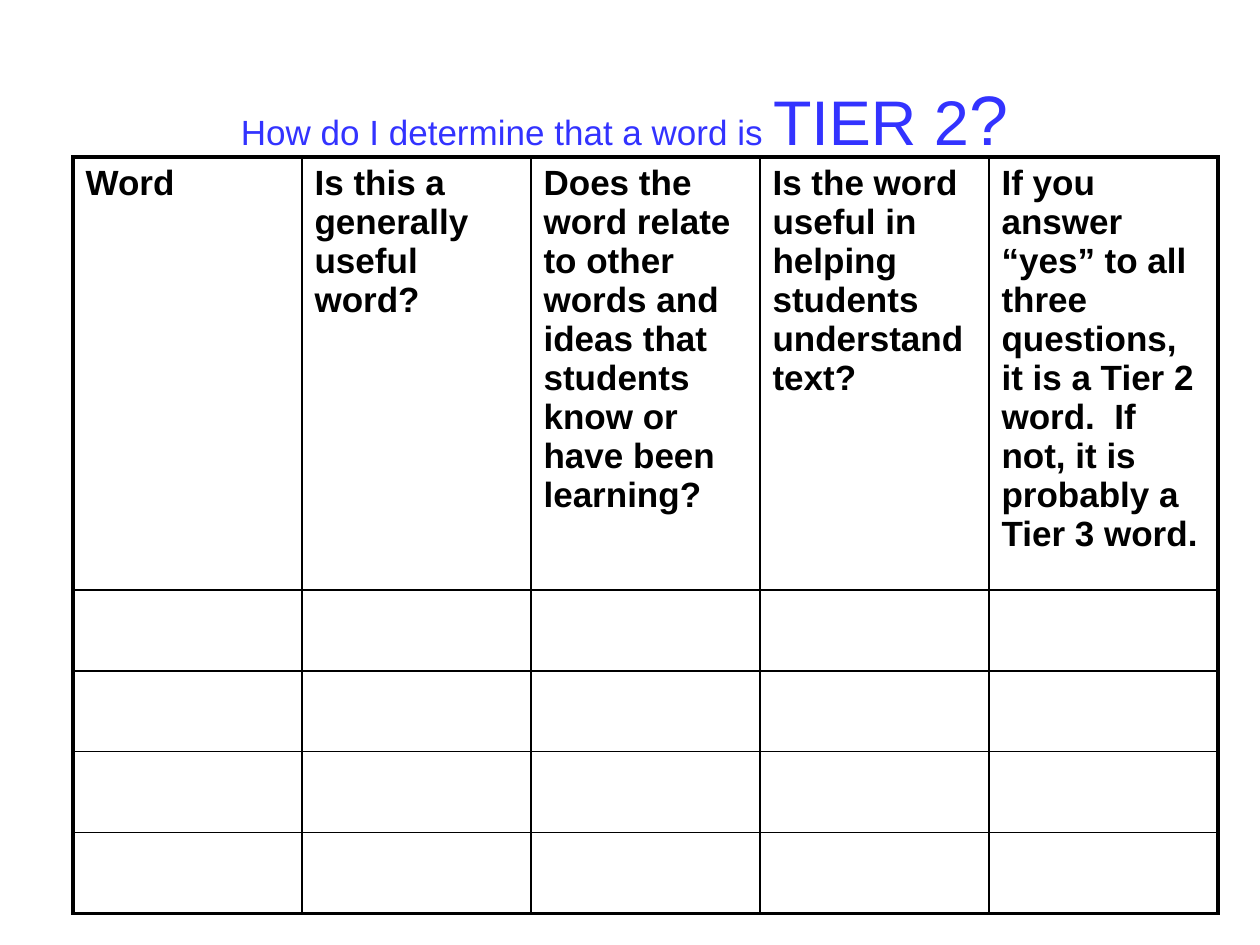
from pptx import Presentation
from pptx.dml.color import RGBColor
from pptx.enum.text import MSO_ANCHOR, PP_ALIGN
from pptx.oxml.xmlchemy import OxmlElement
from pptx.util import Pt

PX = 914400 // 126
FONT = "Arial"
COLORS = {"title": "3333FF", "text": "000000", "border": "000000"}
THIN, THICK = 1, 2.25

TITLE_RUNS = [("How do I determine that a word is ", 20), ("TIER 2", 36), ("?", 40)]
HEADINGS = [
    "Word",
    "Is this a generally useful word?",
    "Does the word relate to other words and ideas that students know or have been learning?",
    "Is the word useful in helping students understand text?",
    "If you answer “yes” to all three questions, it is a Tier 2 word.  If not, it is probably a Tier 3 word.",
]
BLANK_ROWS = 4


def px(value):
    return int(value * PX)


def style_run(run, size, color, bold=False):
    run.font.name = FONT
    run.font.size = Pt(size)
    run.font.bold = bold
    run.font.color.rgb = RGBColor.from_string(COLORS[color])


def set_borders(cell, widths):
    properties = cell._tc.get_or_add_tcPr()
    for position, (side, width) in enumerate(widths.items()):
        line = OxmlElement(f"a:ln{side}")
        line.set("w", str(Pt(width)))
        fill = OxmlElement("a:solidFill")
        color = OxmlElement("a:srgbClr")
        color.set("val", COLORS["border"])
        fill.append(color)
        line.append(fill)
        properties.insert(position, line)


def add_title(slide, left, top, width, height):
    box = slide.shapes.add_textbox(px(left), px(top), px(width), px(height))
    text_frame = box.text_frame
    text_frame.word_wrap = True
    text_frame.vertical_anchor = MSO_ANCHOR.TOP
    text_frame.margin_top = px(13)
    paragraph = text_frame.paragraphs[0]
    paragraph.alignment = PP_ALIGN.CENTER
    for text, size in TITLE_RUNS:
        run = paragraph.add_run()
        run.text = text
        style_run(run, size, "title")


def add_word_table(slide, left, top, width, height, blank_height):
    row_count, column_count = BLANK_ROWS + 1, len(HEADINGS)
    frame = slide.shapes.add_table(
        row_count, column_count, px(left), px(top), px(width), px(height)
    )
    table = frame.table
    table.first_row = False
    table.horz_banding = False
    for column in table.columns:
        column.width = px(width / column_count)
    for index, row in enumerate(table.rows):
        row.height = px(blank_height if index else height - BLANK_ROWS * blank_height)
        for position, cell in enumerate(row.cells):
            cell.fill.background()
            set_borders(cell, {
                "L": THIN if position else THICK,
                "R": THICK if position == column_count - 1 else THIN,
                "T": THIN if index else THICK,
                "B": THICK if index == row_count - 1 else THIN,
            })
    for cell, heading in zip(table.rows[0].cells, HEADINGS):
        cell.text_frame.text = heading
        style_run(cell.text_frame.paragraphs[0].runs[0], 20, "text", bold=True)


def main():
    presentation = Presentation()
    presentation.slide_width = px(1260)
    presentation.slide_height = px(945)
    slide = presentation.slides.add_slide(presentation.slide_layouts[6])
    add_title(slide, 21, 63, 1207, 345)
    add_word_table(slide, 73, 157, 1145, 756, 81)
    presentation.save("out.pptx")


if __name__ == "__main__":
    main()
